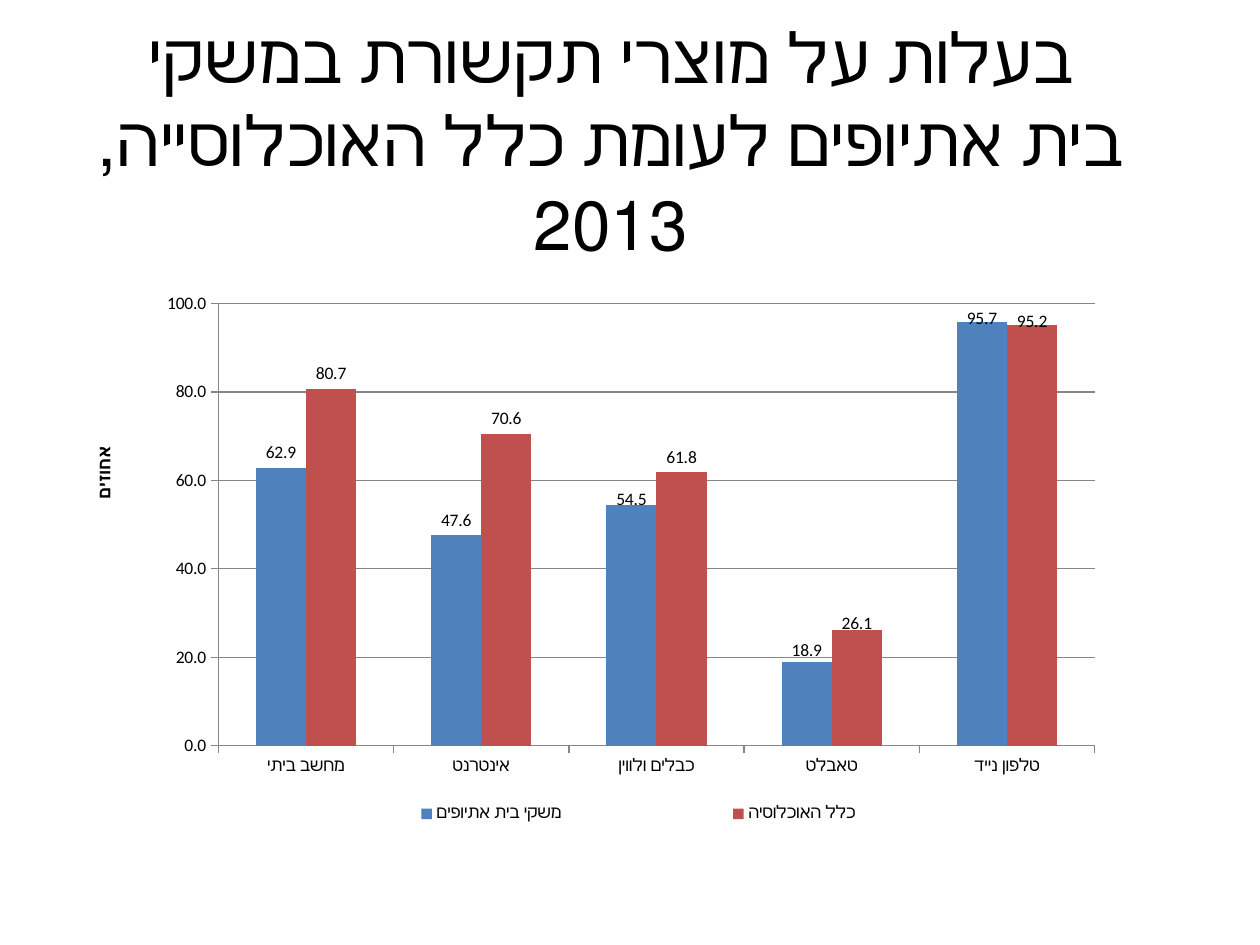
from dataclasses import dataclass

from lxml.etree import SubElement
from pptx import Presentation
from pptx.chart.data import CategoryChartData
from pptx.dml.color import RGBColor
from pptx.enum.chart import XL_CHART_TYPE, XL_LABEL_POSITION, XL_LEGEND_POSITION, XL_TICK_MARK
from pptx.enum.text import MSO_ANCHOR, PP_ALIGN
from pptx.oxml.ns import qn
from pptx.util import Pt


@dataclass(frozen=True)
class Theme:
    font: str = "Calibri"
    ink: RGBColor = RGBColor(0, 0, 0)
    grid: RGBColor = RGBColor(0x86, 0x86, 0x86)
    bars: tuple = (RGBColor(0x4F, 0x81, 0xBD), RGBColor(0xC0, 0x50, 0x4D))
    head: float = 39.6
    small: float = 10


theme = Theme()


def style(font, size, bold=False):
    font.name, font.size, font.bold = theme.font, Pt(size), bold
    font.color.rgb = theme.ink


def place(node, prior, **rules):
    """Give a chart part a manual layout, right after its prior child."""
    for old in node.findall(qn("c:layout")):
        node.remove(old)
    layout = SubElement(node, qn("c:layout"))
    node.find(qn(prior)).addnext(layout)
    manual = SubElement(layout, qn("c:manualLayout"))
    for key, value in rules.items():
        SubElement(manual, qn(f"c:{key}")).set("val", str(value))


deck = Presentation()
deck.slide_width, deck.slide_height = Pt(720), Pt(540)
slide = deck.slides.add_slide(deck.slide_layouts[6])

# Title, right to left
box = slide.shapes.add_textbox(Pt(48), Pt(43), Pt(602), Pt(73))
frame = box.text_frame
frame.word_wrap = True
frame.vertical_anchor = MSO_ANCHOR.MIDDLE
title = frame.paragraphs[0]
title.text = "בעלות על מוצרי תקשורת במשקי בית אתיופים לעומת כלל האוכלוסייה, 2013"
title.alignment = PP_ALIGN.CENTER
style(title.font, theme.head)
box.element.find(".//" + qn("a:pPr")).set("rtl", "1")

# Chart data
data = CategoryChartData(number_format="0.0")
data.categories = ["מחשב ביתי", "אינטרנט", "כבלים ולווין", "טאבלט", "טלפון נייד"]
data.add_series("משקי בית אתיופים", (62.9, 47.6, 54.5, 18.9, 95.7))
data.add_series("כלל האוכלוסיה", (80.7, 70.6, 61.8, 26.1, 95.2))
chart = slide.shapes.add_chart(
    XL_CHART_TYPE.COLUMN_CLUSTERED, Pt(36.7), Pt(122.4), Pt(607.7), Pt(357), data
).chart
chart.has_title = False
style(chart.font, theme.small)
area = chart.element.find(".//" + qn("c:plotArea"))
layout = area.find(qn("c:layout"))
if layout is None:
    layout = SubElement(area, qn("c:layout"))
    area.insert(0, layout)
for old in list(layout):
    layout.remove(old)
manual = SubElement(layout, qn("c:manualLayout"))
for key, value in dict(layoutTarget="inner", xMode="edge", yMode="edge",
                       x=0.145, y=0.143, w=0.824, h=0.708).items():
    SubElement(manual, qn(f"c:{key}")).set("val", str(value))

# Columns and value labels; some labels sit lower than the default
plot = chart.plots[0]
plot.gap_width, plot.overlap = 150, 0
plot.vary_by_categories = False
drops = ({2: 0.015, 3: 0.005, 4: 0.018}, {3: 0.013, 4: 0.019})
for row, color, drop in zip(plot.series, theme.bars, drops):
    row.format.fill.solid()
    row.format.fill.fore_color.rgb = color
    row.invert_if_negative = False
    tags = row.data_labels
    tags.show_value = True
    tags.number_format, tags.number_format_is_linked = "0.0", False
    tags.position = XL_LABEL_POSITION.OUTSIDE_END
    for spot in drop:
        row.points[spot].data_label.position = XL_LABEL_POSITION.OUTSIDE_END
for node, drop in zip(area.iter(qn("c:ser")), drops):
    for tag in node.iter(qn("c:dLbl")):
        spot = int(tag.find(qn("c:idx")).get("val"))
        place(tag, "c:idx", x=0, y=drop[spot])

# Axes
scale = chart.value_axis
scale.minimum_scale, scale.maximum_scale, scale.major_unit = 0, 100, 20
scale.has_major_gridlines = True
scale.tick_labels.number_format = "0.0"
scale.tick_labels.number_format_is_linked = False
for axis in (chart.category_axis, scale):
    axis.major_tick_mark = XL_TICK_MARK.OUTSIDE
    axis.minor_tick_mark = XL_TICK_MARK.NONE
    style(axis.tick_labels.font, theme.small)
for line in (chart.category_axis.format.line, scale.format.line,
             scale.major_gridlines.format.line):
    line.color.rgb = theme.grid
    line.width = Pt(0.75)
label = scale.axis_title.text_frame
label.text = "אחוזים"
style(label.paragraphs[0].font, theme.small, bold=True)
name = area.find(".//" + qn("c:title"))
name.find(".//" + qn("a:bodyPr")).set("rot", "-5400000")
name.find(".//" + qn("a:bodyPr")).set("vert", "horz")
place(name, "c:tx", xMode="edge", yMode="edge", x=0.026, y=0.366)

# Legend, spread along the foot of the chart
chart.has_legend = True
chart.legend.position = XL_LEGEND_POSITION.LEFT
chart.legend.include_in_layout = False
style(chart.legend.font, theme.small)
place(chart.element.find(".//" + qn("c:legend")), "c:legendPos",
      xMode="edge", yMode="edge", x=0.18, y=0.93, w=0.72, h=0.06)

deck.save("out.pptx")
